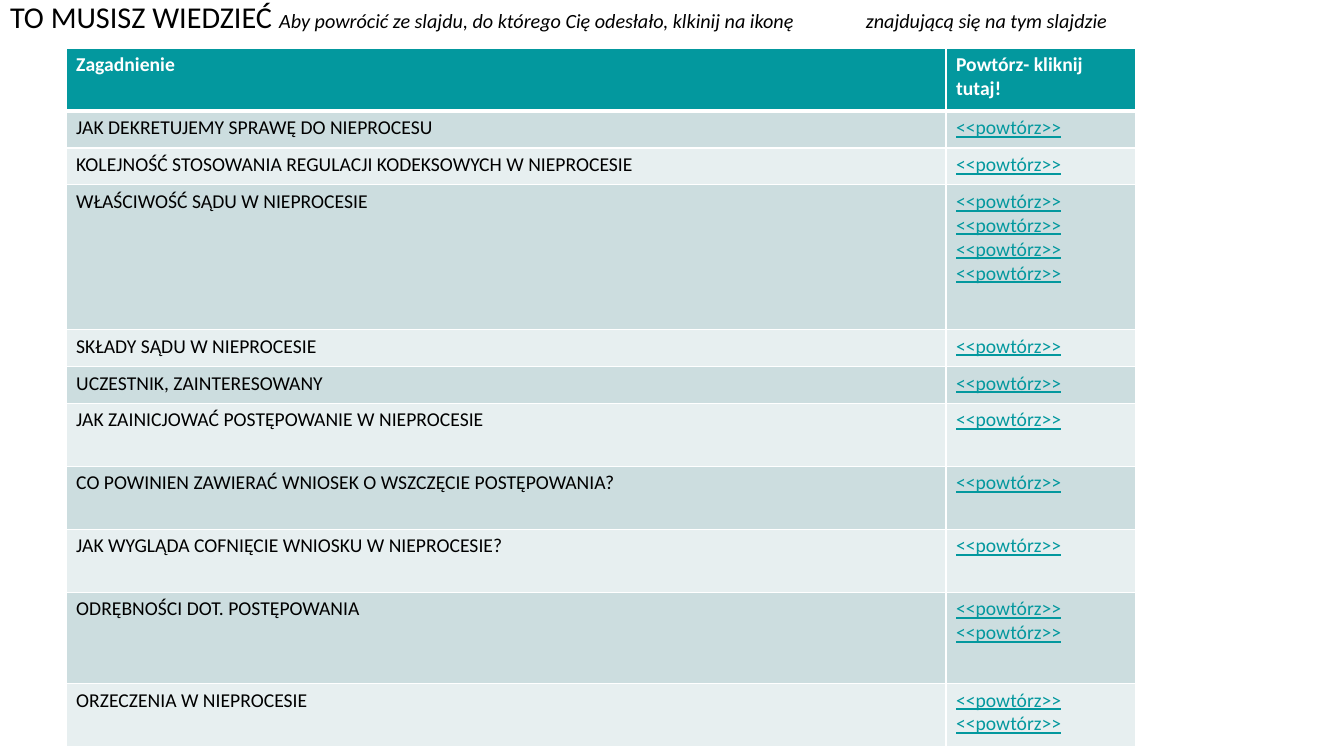
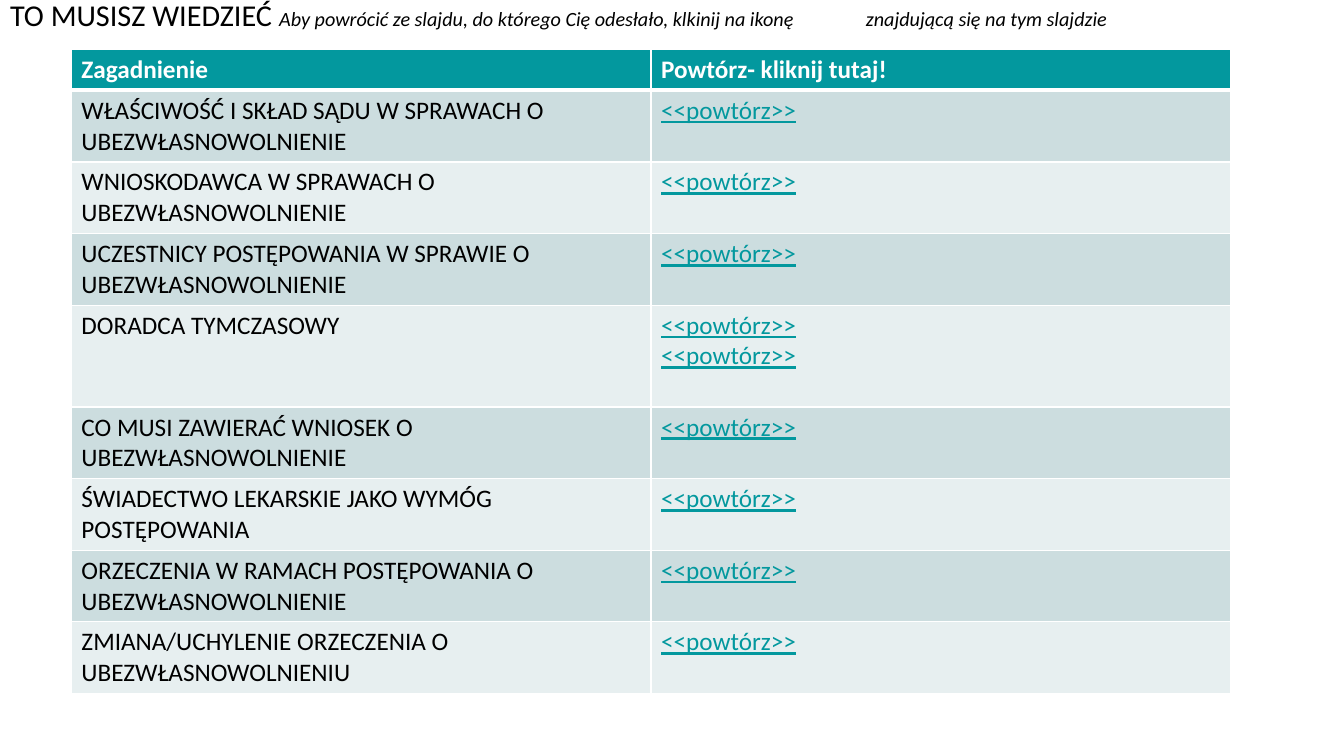
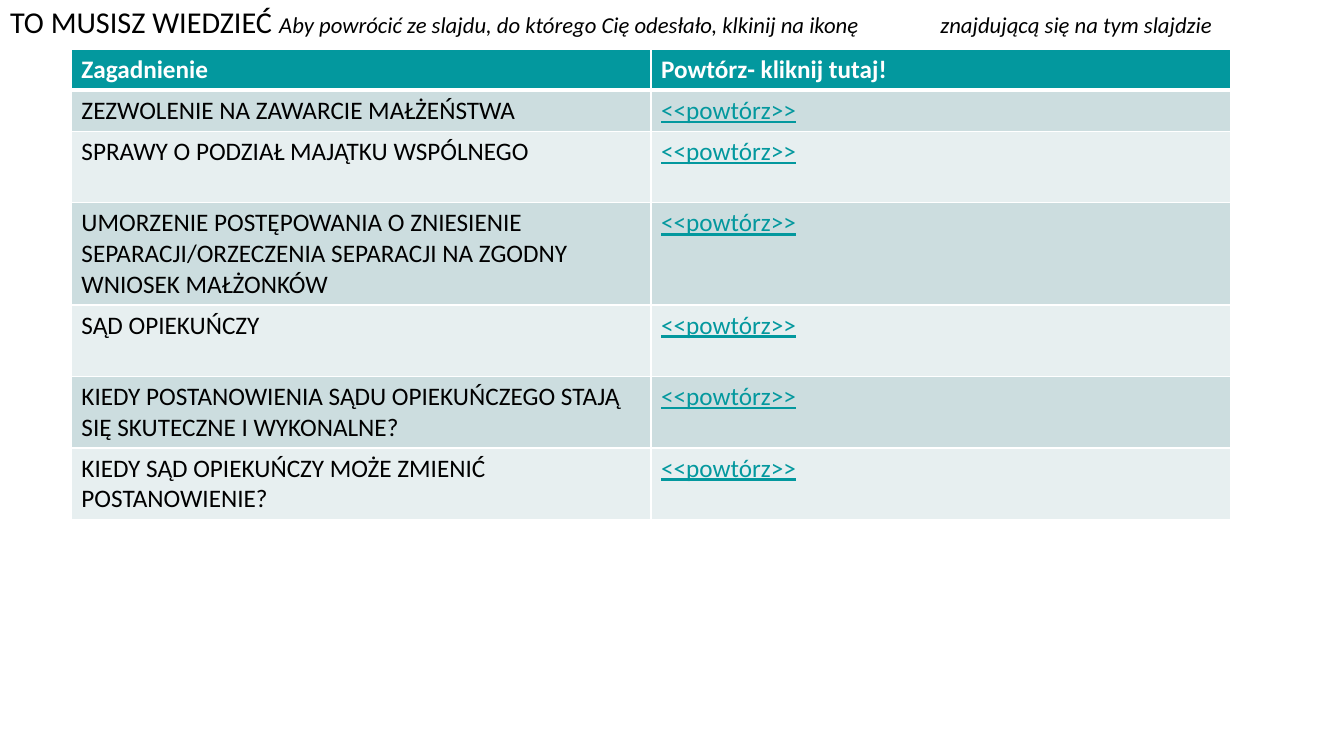
from dataclasses import dataclass

from lxml.etree import SubElement
from pptx import Presentation
from pptx.dml.color import RGBColor
from pptx.enum.text import MSO_ANCHOR as Anchor
from pptx.enum.text import MSO_AUTO_SIZE as AutoSize
from pptx.enum.text import PP_ALIGN as Align
from pptx.oxml.ns import qn
from pptx.util import Pt

PX = 9525
FONT = "Calibri"
TEAL = RGBColor(0x03, 0x98, 0x9E)
BAND_DARK = RGBColor(0xCC, 0xDD, 0xDF)
BAND_LIGHT = RGBColor(0xE7, 0xEF, 0xF0)
BLACK = RGBColor(0, 0, 0)
WHITE = RGBColor(0xFF, 0xFF, 0xFF)

HEADING = "TO MUSISZ WIEDZIEĆ "
HINT = (
    "Aby powrócić ze slajdu, do którego Cię odesłało, klkinij na ikonę"
    "\tznajdującą się na tym slajdzie"
)
COLUMNS = ("Zagadnienie", "Powtórz- kliknij tutaj!")
REPEAT = "<<powtórz>>"


@dataclass(frozen=True)
class Topic:
    text: str
    height: int
    repeats: int = 1


@dataclass(frozen=True)
class TitleStyle:
    width: int
    height: int
    tab: int
    hint_size: float


@dataclass(frozen=True)
class TopicTable:
    left: int
    top: int
    widths: tuple[int, int]
    header_height: int
    size: int
    topics: tuple[Topic, ...]


@dataclass(frozen=True)
class TopicPage:
    title: TitleStyle
    table: TopicTable


PAGES = (
    TopicPage(
        TitleStyle(1226, 36, 815, 14.4),
        TopicTable(63, 46, (838, 181), 60, 14, (
            Topic("JAK DEKRETUJEMY SPRAWĘ DO NIEPROCESU", 35),
            Topic("KOLEJNOŚĆ STOSOWANIA REGULACJI KODEKSOWYCH W NIEPROCESIE", 35),
            Topic("WŁAŚCIWOŚĆ SĄDU W NIEPROCESIE", 138, 4),
            Topic("SKŁADY SĄDU W NIEPROCESIE", 35),
            Topic("UCZESTNIK, ZAINTERESOWANY", 35),
            Topic("JAK ZAINICJOWAĆ POSTĘPOWANIE W NIEPROCESIE", 60),
            Topic("CO POWINIEN ZAWIERAĆ WNIOSEK O WSZCZĘCIE POSTĘPOWANIA?", 60),
            Topic("JAK WYGLĄDA COFNIĘCIE WNIOSKU W NIEPROCESIE?", 60),
            Topic("ODRĘBNOŚCI DOT. POSTĘPOWANIA", 87, 2),
            Topic("ORZECZENIA W NIEPROCESIE", 60, 2),
        )),
    ),
    TopicPage(
        TitleStyle(1232, 32, 815, 14.4),
        TopicTable(68, 47, (552, 552), 39, 18, (
            Topic("WŁAŚCIWOŚĆ I SKŁAD SĄDU W SPRAWACH O UBEZWŁASNOWOLNIENIE", 68),
            Topic("WNIOSKODAWCA W SPRAWACH O UBEZWŁASNOWOLNIENIE", 68),
            Topic("UCZESTNICY POSTĘPOWANIA W SPRAWIE O UBEZWŁASNOWOLNIENIE", 68),
            Topic("DORADCA TYMCZASOWY", 97, 2),
            Topic("CO MUSI ZAWIERAĆ WNIOSEK O UBEZWŁASNOWOLNIENIE", 68),
            Topic("ŚWIADECTWO LEKARSKIE JAKO WYMÓG POSTĘPOWANIA", 68),
            Topic("ORZECZENIA W RAMACH POSTĘPOWANIA O UBEZWŁASNOWOLNIENIE", 68),
            Topic("ZMIANA/UCHYLENIE ORZECZENIA O UBEZWŁASNOWOLNIENIU", 68),
        )),
    ),
    TopicPage(
        TitleStyle(1172, 46, 886, 16.2),
        TopicTable(68, 47, (552, 552), 39, 18, (
            Topic("ZEZWOLENIE NA ZAWARCIE MAŁŻEŃSTWA", 39),
            Topic("SPRAWY O PODZIAŁ MAJĄTKU WSPÓLNEGO", 68),
            Topic(
                "UMORZENIE POSTĘPOWANIA O ZNIESIENIE SEPARACJI/ORZECZENIA "
                "SEPARACJI NA ZGODNY WNIOSEK MAŁŻONKÓW", 97,
            ),
            Topic("SĄD OPIEKUŃCZY", 68),
            Topic(
                "KIEDY POSTANOWIENIA SĄDU OPIEKUŃCZEGO STAJĄ "
                "SIĘ SKUTECZNE I WYKONALNE?", 68,
            ),
            Topic("KIEDY SĄD OPIEKUŃCZY MOŻE ZMIENIĆ POSTANOWIENIE?", 68),
        )),
    ),
)


def px(length: int) -> int:
    return length * PX


def fill_title(box, style: TitleStyle) -> None:
    box.left, box.top = 0, 0
    box.width, box.height = px(style.width), px(style.height)
    frame = box.text_frame
    frame.auto_size = AutoSize.NONE
    frame.word_wrap = True
    frame.vertical_anchor = Anchor.MIDDLE
    frame.margin_top = frame.margin_bottom = 0
    para = frame.paragraphs[0]
    para.alignment = Align.LEFT
    para.line_spacing = 0.9
    tabs = SubElement(para._p.get_or_add_pPr(), qn("a:tabLst"))
    SubElement(tabs, qn("a:tab"), pos=str(px(style.tab)), algn="l")
    for text, size, italic in ((HEADING, 21.6, False), (HINT, style.hint_size, True)):
        span = para.add_run()
        span.text = text
        span.font.name = FONT
        span.font.size = Pt(size)
        span.font.italic = italic
        span.font.color.rgb = BLACK


def set_borders(cell, top: int, bottom: int) -> None:
    properties = cell._tc.get_or_add_tcPr()
    for side, width in (("L", 1), ("R", 1), ("T", top), ("B", bottom)):
        line = SubElement(properties, qn(f"a:ln{side}"), w=str(Pt(width)))
        solid = SubElement(line, qn("a:solidFill"))
        SubElement(solid, qn("a:srgbClr"), val=str(WHITE))


def fill_cell(cell, lines: list[str], size: int, color: RGBColor,
              bold: bool = False, underline: bool = False) -> None:
    cell.text = "\n".join(lines)
    for para in cell.text_frame.paragraphs:
        font = para.font
        font.name = FONT
        font.size = Pt(size)
        font.bold = bold
        font.underline = underline
        font.color.rgb = color


def add_topic_table(page, spec_table: TopicTable) -> None:
    heights = [spec_table.header_height, *(topic.height for topic in spec_table.topics)]
    table = page.shapes.add_table(
        len(heights), len(COLUMNS), px(spec_table.left), px(spec_table.top),
        px(sum(spec_table.widths)), px(sum(heights)),
    ).table
    for column, width in zip(table.columns, spec_table.widths):
        column.width = px(width)
    for index, height in enumerate(heights):
        table.rows[index].height = px(height)
        band = TEAL if index == 0 else (BAND_LIGHT, BAND_DARK)[index % 2]
        for cell in table.rows[index].cells:
            set_borders(cell, 3 if index == 1 else 1, 3 if index == 0 else 1)
            cell.fill.solid()
            cell.fill.fore_color.rgb = band
    size = spec_table.size
    for index, heading in enumerate(COLUMNS):
        fill_cell(table.cell(0, index), [heading], size, WHITE, bold=True)
    for index, topic in enumerate(spec_table.topics, start=1):
        fill_cell(table.cell(index, 0), [topic.text], size, BLACK)
        fill_cell(table.cell(index, 1), [REPEAT] * topic.repeats, size, TEAL, underline=True)


def main() -> None:
    deck = Presentation()
    deck.slide_width, deck.slide_height = px(1280), px(720)
    title_only = deck.slide_layouts[5]
    for content in PAGES:
        page = deck.slides.add_slide(title_only)
        fill_title(page.shapes.title, content.title)
        add_topic_table(page, content.table)
    deck.save("out.pptx")


if __name__ == "__main__":
    main()
